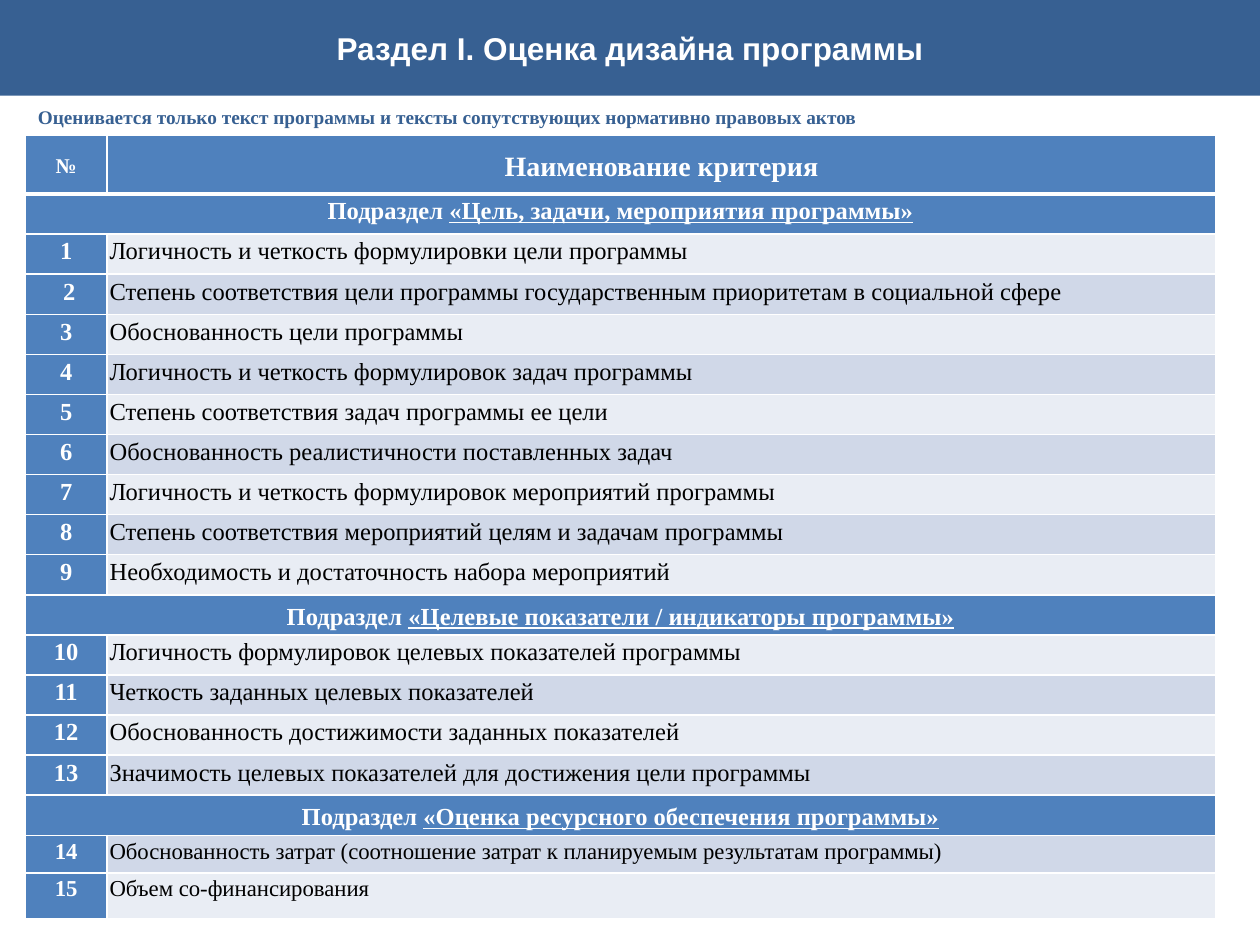
"""Build a slide listing the criteria for assessing programme design."""
from dataclasses import dataclass

from lxml.etree import SubElement
from pptx import Presentation
from pptx.dml.color import RGBColor
from pptx.enum.text import MSO_ANCHOR as Anchor, PP_ALIGN as Align
from pptx.oxml.ns import qn
from pptx.util import Inches, Pt

SERIF = "Times New Roman"
NAVY, BLUE, WHITE, BLACK = "376092", "4F81BD", "FFFFFF", "000000"
BANDS = ("E9EDF4", "D0D8E8")
TABLE_HEIGHT, HEADER_HEIGHT, LAST_HEIGHTS = 6.22, 0.47, (0.3, 0.36)


@dataclass(frozen=True)
class Style:
    """Look of one piece of text."""
    size: float
    color: str = WHITE
    bold: bool = True
    align: Align = Align.CENTER
    font: str = SERIF


@dataclass(frozen=True)
class Subsection:
    """A named group of criteria."""
    name: str
    criteria: tuple[str, ...]
    anchor: Anchor = Anchor.MIDDLE
    size: float = 14


SUBSECTIONS = (
    Subsection("«Цель, задачи, мероприятия программы»", (
        "Логичность и четкость формулировки цели программы",
        "Степень соответствия цели программы государственным приоритетам в социальной сфере",
        "Обоснованность цели программы",
        "Логичность и четкость формулировок задач программы",
        "Степень соответствия задач программы ее цели",
        "Обоснованность реалистичности поставленных задач",
        "Логичность и четкость формулировок мероприятий программы",
        "Степень соответствия мероприятий целям и задачам программы",
        "Необходимость и достаточность набора мероприятий",
    ), anchor=Anchor.TOP),
    Subsection("«Целевые показатели / индикаторы программы»", (
        "Логичность формулировок целевых показателей программы",
        "Четкость заданных целевых показателей",
        "Обоснованность достижимости заданных показателей",
        "Значимость целевых показателей для достижения цели программы",
    )),
    Subsection("«Оценка ресурсного обеспечения программы»", (
        "Обоснованность затрат (соотношение затрат к планируемым результатам программы)",
        "Объем со-финансирования",
    ), size=13),
)


def rgb(color: str) -> RGBColor:
    """Turn a hex string into a colour."""
    return RGBColor.from_string(color)


def format_text(paragraph, style: Style, spacing: float) -> None:
    """Format a paragraph and all its runs."""
    paragraph.alignment = style.align
    paragraph.line_spacing = spacing
    for run in paragraph.runs:
        run.font.name = style.font
        run.font.size = Pt(style.size)
        run.font.bold = style.bold
        run.font.color.rgb = rgb(style.color)


def place(holder, left: float, top: float, width: float, height: float) -> None:
    """Move and size a placeholder."""
    holder.left, holder.top = Inches(left), Inches(top)
    holder.width, holder.height = Inches(width), Inches(height)


def dress_cell(cell, fill: str, anchor: Anchor, top: float = 1, bottom: float = 1) -> None:
    """Set the borders, margins and fill of a cell."""
    properties = cell._tc.get_or_add_tcPr()
    for side, width in zip("LRTB", (1, 1, top, bottom)):
        line = SubElement(properties, qn(f"a:ln{side}"), w=str(Pt(width)))
        SubElement(SubElement(line, qn("a:solidFill")), qn("a:srgbClr"), val=WHITE)
    cell.fill.solid()
    cell.fill.fore_color.rgb = rgb(fill)
    cell.margin_left = cell.margin_right = Inches(0.02)
    cell.margin_top = cell.margin_bottom = 0
    cell.vertical_anchor = anchor


def write_cell(cell, text: str, style: Style) -> None:
    """Write formatted text into a cell."""
    paragraph = cell.text_frame.paragraphs[0]
    paragraph.text = text
    format_text(paragraph, style, 1.15)


def write_subsection(table, row: int, subsection: Subsection) -> None:
    """Fill a merged row with the name of a subsection."""
    heading, spanned = table.cell(row, 0), table.cell(row, 1)
    heading.merge(spanned)
    for cell in (heading, spanned):
        dress_cell(cell, BLUE, subsection.anchor, top=3 if row == 1 else 1)
    paragraph = heading.text_frame.paragraphs[0]
    paragraph.text = "Подраздел "
    name = paragraph.add_run()
    name.text = subsection.name
    name.font.underline = True
    paragraph.space_before = paragraph.space_after = Pt(12)
    format_text(paragraph, Style(14), 1.15)


def write_criterion(table, row: int, number: int, criterion: str, size: float) -> None:
    """Fill a row with a numbered criterion."""
    fills = (BLUE, BANDS[row % 2])
    styles = (Style(size), Style(size, BLACK, False, Align.JUSTIFY))
    label = " 2" if number == 2 else str(number)
    for cell, text, fill, style in zip(table.rows[row].cells, (label, criterion), fills, styles):
        dress_cell(cell, fill, Anchor.TOP)
        write_cell(cell, text, style)


def add_criteria(slide) -> None:
    """Add the table of criteria."""
    row_count = 1 + sum(1 + len(subsection.criteria) for subsection in SUBSECTIONS)
    table = slide.shapes.add_table(row_count, 2, Inches(0.2), Inches(1.07),
                                   Inches(9.45), Inches(TABLE_HEIGHT)).table
    table.columns[0].width, table.columns[1].width = Inches(0.65), Inches(8.8)
    regular_count = row_count - 1 - len(LAST_HEIGHTS)
    regular = (TABLE_HEIGHT - HEADER_HEIGHT - sum(LAST_HEIGHTS)) / regular_count
    heights = (HEADER_HEIGHT, *[regular] * regular_count, *LAST_HEIGHTS)
    for table_row, height in zip(table.rows, heights):
        table_row.height = Inches(height)

    headers = (("№", 12), ("Наименование критерия", 16))
    for cell, (header, size) in zip(table.rows[0].cells, headers):
        dress_cell(cell, BLUE, Anchor.MIDDLE, bottom=3)
        write_cell(cell, header, Style(size))

    row, number = 1, 1
    for subsection in SUBSECTIONS:
        write_subsection(table, row, subsection)
        row += 1
        for criterion in subsection.criteria:
            write_criterion(table, row, number, criterion, subsection.size)
            row, number = row + 1, number + 1


def main() -> None:
    """Build and save the presentation."""
    presentation = Presentation()
    presentation.slide_width, presentation.slide_height = Inches(10), Inches(7.5)
    slide = presentation.slides.add_slide(presentation.slide_layouts[1])

    banner = slide.shapes.title
    place(banner, 0, 0, 10, 0.76)
    banner.fill.solid()
    banner.fill.fore_color.rgb = rgb(NAVY)
    banner.text_frame.text = "Раздел I. Оценка дизайна программы"
    banner.text_frame.vertical_anchor = Anchor.MIDDLE
    format_text(banner.text_frame.paragraphs[0], Style(18, font="Arial"), 1)

    scope = slide.placeholders[1]
    place(scope, 0.2, 0.75, 9.3, 0.23)
    scope.text_frame.text = ("Оценивается только текст программы и тексты "
                             "сопутствующих нормативно правовых актов")
    sentence = scope.text_frame.paragraphs[0]
    format_text(sentence, Style(11, NAVY, align=Align.JUSTIFY), 1.2)
    sentence.space_before = Pt(2.2)
    bullet_properties = sentence._p.get_or_add_pPr()
    bullet_properties.set("marL", "0")
    bullet_properties.set("indent", "0")
    SubElement(bullet_properties, qn("a:buNone"))

    add_criteria(slide)
    presentation.save("out.pptx")


if __name__ == "__main__":
    main()
